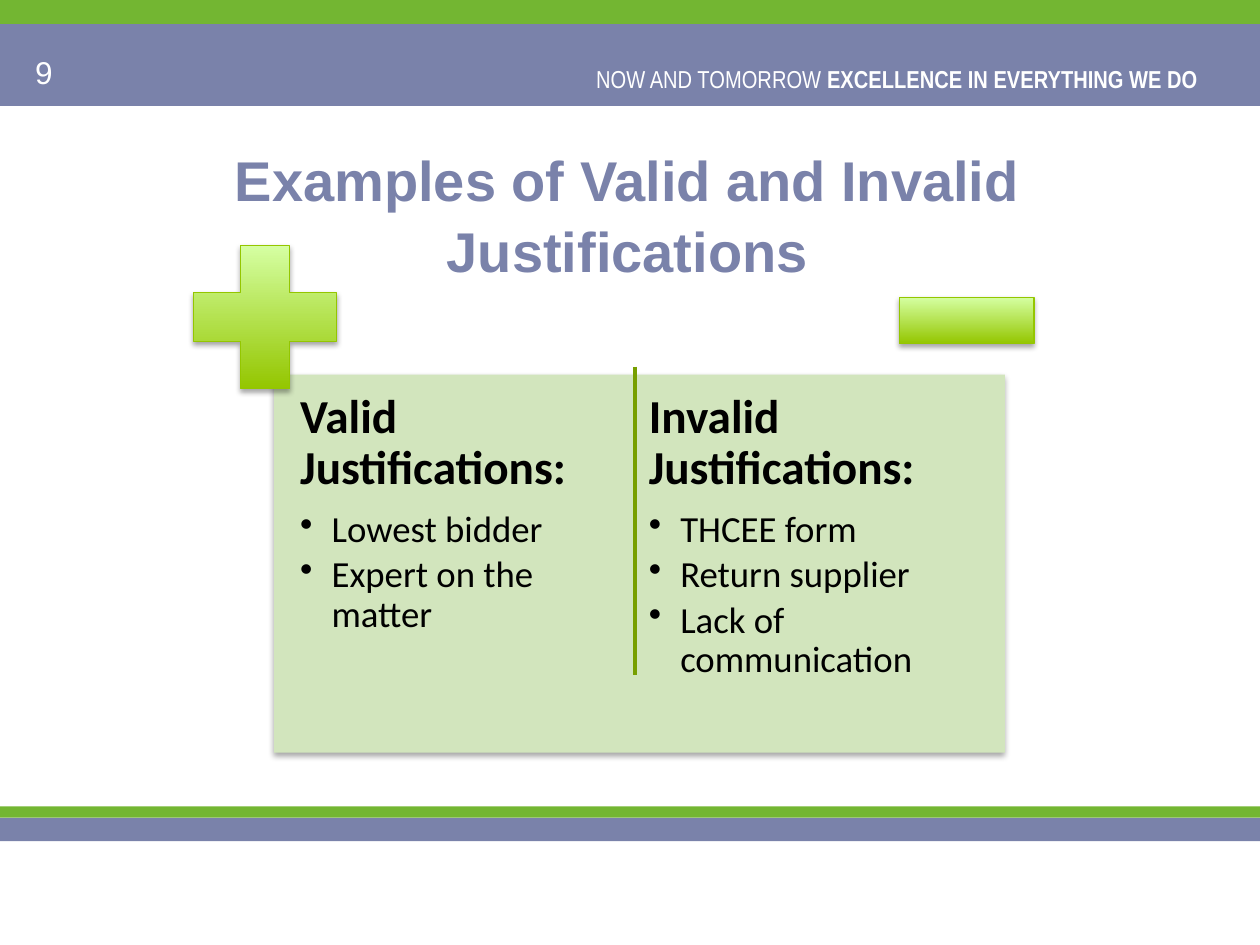
from lxml.etree import SubElement
from pptx import Presentation
from pptx.dml.color import RGBColor
from pptx.enum.shapes import MSO_CONNECTOR, MSO_SHAPE
from pptx.enum.text import PP_ALIGN
from pptx.oxml.ns import qn
from pptx.util import Pt

BLUE, GREEN, LIME, PALE_LIME = "7A82AA", "73B632", "94C600", "D5FFA2"
PANEL, DIVIDER, WHITE, BLACK = "D2E5BD", "779F00", "FFFFFF", "000000"


def color(value):
    return RGBColor.from_string(value)


class SlideBuilder:
    """Places styled elements on one slide; all lengths are points."""

    def __init__(self, slide):
        self.shapes = slide.shapes

    def block(self, bounds, fill, kind=MSO_SHAPE.RECTANGLE):
        shape = self.shapes.add_shape(kind, *map(Pt, bounds))
        shape.shadow.inherit = False
        shape.fill.solid()
        shape.fill.fore_color.rgb = color(fill)
        shape.line.fill.background()
        return shape

    def raise_up(self, shape):
        """Give the shape a soft shadow straight below it."""
        effects = shape._element.spPr.find(qn("a:effectLst"))
        shadow = SubElement(effects, qn("a:outerShdw"), blurRad=str(Pt(3.1)),
                            dist=str(Pt(1.8)), dir="5400000", rotWithShape="0")
        tint = SubElement(shadow, qn("a:srgbClr"), val=BLACK)
        SubElement(tint, qn("a:alpha"), val="35000")

    def sign(self, bounds, kind):
        """Add a raised plus or minus sign, dark at its foot."""
        shape = self.block(bounds, LIME, kind)
        shape.fill.gradient()
        shape.fill.gradient_angle = 90
        for stop, shade in zip(shape.fill.gradient_stops, (LIME, PALE_LIME)):
            stop.color.rgb = color(shade)
        shape.line.color.rgb = color(LIME)
        shape.line.width = Pt(0.75)
        self.raise_up(shape)
        return shape

    def text_frame(self, bounds):
        frame = self.shapes.add_textbox(*map(Pt, bounds)).text_frame
        frame.word_wrap = True
        return frame

    def style(self, para, size, font, ink, bold=False):
        para.font.size = Pt(size)
        para.font.name = font
        para.font.color.rgb = color(ink)
        para.font.bold = bold

    def label(self, bounds, text, size, font="Arial", ink=WHITE, bold=False,
              align=PP_ALIGN.LEFT):
        para = self.text_frame(bounds).paragraphs[0]
        para.text = text
        para.alignment = align
        self.style(para, size, font, ink, bold)
        return para

    def bullet(self, para):
        properties = para._p.get_or_add_pPr()
        properties.set("marL", str(Pt(18)))
        properties.set("indent", str(-Pt(18)))
        SubElement(properties, qn("a:buChar"), char="•")

    def bullet_list(self, bounds, heading, items):
        frame = self.text_frame(bounds)
        frame.margin_left = frame.margin_right = Pt(4.5)
        frame.margin_top = frame.margin_bottom = Pt(4.5)
        title = frame.paragraphs[0]
        title.text = heading
        title.line_spacing = 0.9
        title.space_after = Pt(9.5)
        self.style(title, 27, "Calibri", BLACK, bold=True)
        for item in items:
            para = frame.add_paragraph()
            para.text = item
            para.line_spacing = 0.9
            para.space_after = Pt(3.15)
            self.bullet(para)
            self.style(para, 21, "Calibri", BLACK)

    def line(self, start, end, ink, width):
        connector = self.shapes.add_connector(
            MSO_CONNECTOR.STRAIGHT, *map(Pt, start + end))
        connector.line.color.rgb = color(ink)
        connector.line.width = Pt(width)
        SubElement(connector._element.spPr, qn("a:effectLst"))


def main():
    deck = Presentation()
    deck.slide_width, deck.slide_height = Pt(720), Pt(540)
    page = SlideBuilder(deck.slides.add_slide(deck.slide_layouts[6]))

    for top, height, fill in ((13.7, 46.8, BLUE), (0, 13.7, GREEN),
                              (467.3, 13.4, BLUE), (460.8, 6.5, GREEN)):
        page.block((0, top, 720, height), fill)

    motto = page.label((331.2, 33.1, 363.6, 24.5), "NOW AND TOMORROW ", 14,
                       "Arial Narrow", align=PP_ALIGN.RIGHT)
    span = motto.add_run()
    span.text = "EXCELLENCE IN EVERYTHING WE DO "
    span.font.bold = True
    page.label((13, 26.6, 167.8, 28.8), "9", 18)
    title = page.label((20.2, 77.8, 676.8, 46),
                       "Examples of Valid and Invalid Justifications", 32,
                       ink=BLUE, bold=True, align=PP_ALIGN.CENTER)
    title.line_spacing = 1.05

    page.raise_up(page.block((156.7, 214.1, 417.6, 216), PANEL))
    columns = (
        (167, "Valid Justifications:", ("Lowest bidder", "Expert on the matter")),
        (366.2, "Invalid Justifications:",
         ("THCEE form", "Return supplier", "Lack of communication")),
    )
    for left, heading, items in columns:
        page.bullet_list((left, 219.6, 193.7, 184.3), heading, items)

    plus = page.sign((110.7, 140.4, 81.6, 81.6), MSO_SHAPE.CROSS)
    plus.adjustments[0] = 0.328
    page.sign((513.9, 169.9, 77, 26.6), MSO_SHAPE.RECTANGLE)
    page.line((362.9, 209.5), (362.9, 385.9), DIVIDER, 2)

    deck.save("out.pptx")


if __name__ == "__main__":
    main()
